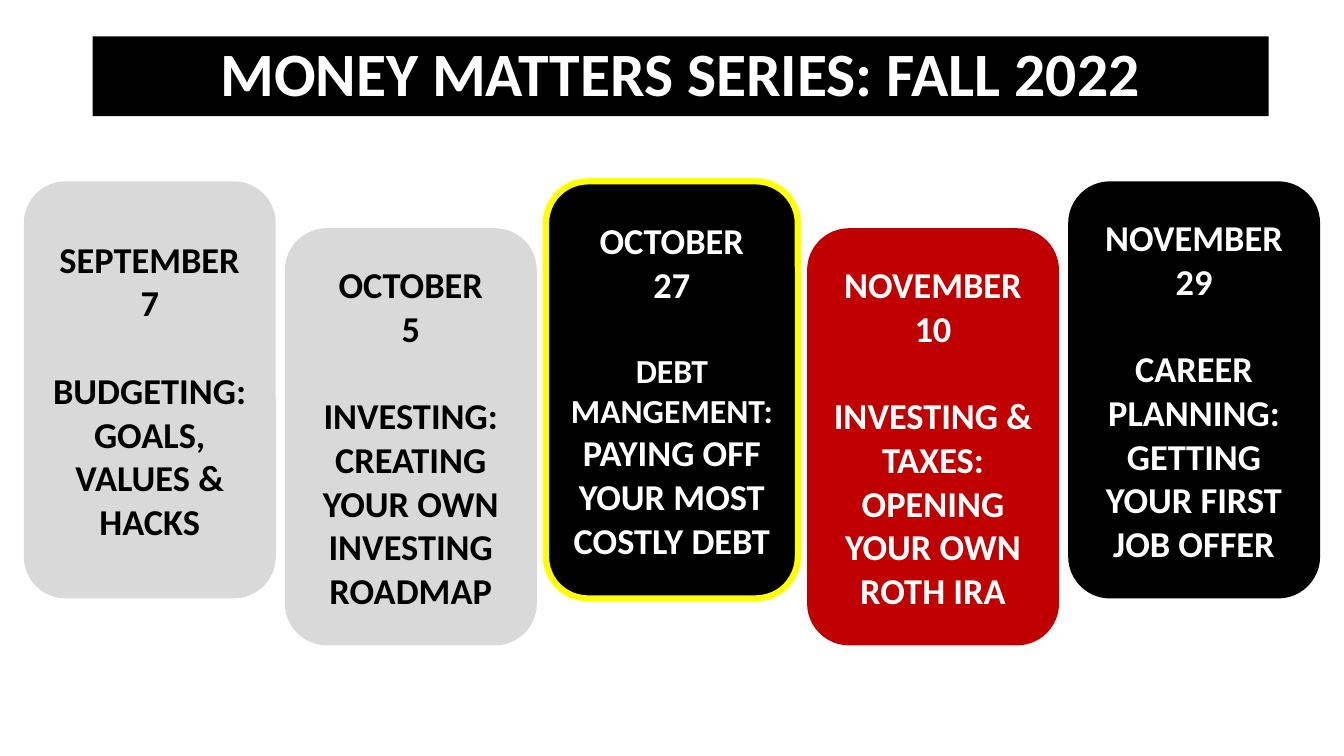
from dataclasses import dataclass

from pptx import Presentation
from pptx.dml.color import RGBColor
from pptx.enum.shapes import MSO_SHAPE as Shape
from pptx.enum.text import MSO_ANCHOR as Anchor, MSO_AUTO_SIZE as AutoSize, PP_ALIGN as Align
from pptx.util import Pt

TITLE = "MONEY MATTERS SERIES: FALL 2022"

# One session per card: month, day, topic paragraphs (each a list of (text, size name)), style
SESSIONS = [
    ("SEPTEMBER", "7",
     [[("BUDGETING:", "body")], [("GOALS, VALUES & HACKS", "body")]], "past"),
    ("OCTOBER", "5",
     [[("INVESTING:", "body")], [("CREATING YOUR OWN INVESTING ROADMAP", "body")]], "past"),
    ("OCTOBER", "27",
     [[("DEBT MANGEMENT: ", "small"), ("PAYING OFF YOUR MOST COSTLY DEBT", "body")]], "next"),
    ("NOVEMBER", "10",
     [[("INVESTING & TAXES:\vOPENING YOUR OWN ROTH IRA", "body")]], "red"),
    ("NOVEMBER", "29",
     [[("CAREER PLANNING: GETTING YOUR FIRST JOB OFFER", "body")]], "black"),
]


@dataclass(frozen=True)
class Theme:
    font: str = "Calibri"
    black: str = "000000"
    white: str = "FFFFFF"
    grey: str = "D9D9D9"
    red: str = "C00000"
    yellow: str = "FFFF00"
    title: int = 44
    body: int = 26
    small: int = 24
    outline: float = 4.5


THEME = Theme()
# fill, text colour, outline colour
CARD_STYLES = {
    "past": (THEME.grey, THEME.black, None),
    "next": (THEME.black, THEME.white, THEME.yellow),
    "red": (THEME.red, THEME.white, None),
    "black": (THEME.black, THEME.white, None),
}

SLIDE_WIDTH, SLIDE_HEIGHT = 960, 540
TITLE_BOX = (66.2, 26, 840, 57)
CARD_WIDTH, CARD_HEIGHT = 180, 298
CARD_LEFT, CARD_PITCH = 17, 186.5
CARD_TOP, CARD_DROP = 129.5, 33.5
TOPIC_GAP = 31.5


def paint(shape, fill):
    shape.fill.solid()
    shape.fill.fore_color.rgb = RGBColor.from_string(fill)


def add_paragraph(frame, pieces, color, first=False):
    """Add one centred paragraph of (text, size) pieces; \\v in a text breaks the line."""
    para = frame.paragraphs[0] if first else frame.add_paragraph()
    para.alignment = Align.CENTER
    for text, size in pieces:
        for number, line in enumerate(text.split("\v")):
            if number:
                para.add_line_break()
            span = para.add_run()
            span.text = line
            for name, value in {"name": THEME.font, "size": Pt(size), "bold": True}.items():
                setattr(span.font, name, value)
            span.font.color.rgb = RGBColor.from_string(color)
    return para


def add_title(slide):
    box = slide.shapes.title
    for name, value in zip(("left", "top", "width", "height"), TITLE_BOX):
        setattr(box, name, Pt(value))
    paint(box, THEME.black)
    frame = box.text_frame
    frame.auto_size = AutoSize.NONE
    frame.vertical_anchor = Anchor.MIDDLE
    para = add_paragraph(frame, [(TITLE, THEME.title)], THEME.white, first=True)
    para.line_spacing = 0.9


def add_card(slide, index, session):
    month, day, topics, style = session
    fill, color, outline = CARD_STYLES[style]
    left = CARD_LEFT + index * CARD_PITCH
    top = CARD_TOP + index % 2 * CARD_DROP
    card = slide.shapes.add_shape(Shape.ROUNDED_RECTANGLE, Pt(left), Pt(top),
                                  Pt(CARD_WIDTH), Pt(CARD_HEIGHT))
    card.shadow.inherit = False
    paint(card, fill)
    if outline:
        card.line.color.rgb = RGBColor.from_string(outline)
        card.line.width = Pt(THEME.outline)
    else:
        card.line.fill.background()

    frame = card.text_frame
    frame.word_wrap = True
    frame.vertical_anchor = Anchor.MIDDLE
    add_paragraph(frame, [(f"{month}\v{day}", THEME.body)], color, first=True)
    for number, topic in enumerate(topics):
        pieces = [(text, getattr(THEME, size)) for text, size in topic]
        para = add_paragraph(frame, pieces, color)
        if number == 0:
            para.space_before = Pt(TOPIC_GAP)


def main():
    deck = Presentation()
    deck.slide_width, deck.slide_height = Pt(SLIDE_WIDTH), Pt(SLIDE_HEIGHT)
    slide = deck.slides.add_slide(deck.slide_layouts.get_by_name("Title Only"))
    add_title(slide)
    for index, session in enumerate(SESSIONS):
        add_card(slide, index, session)
    deck.save("out.pptx")


if __name__ == "__main__":
    main()
